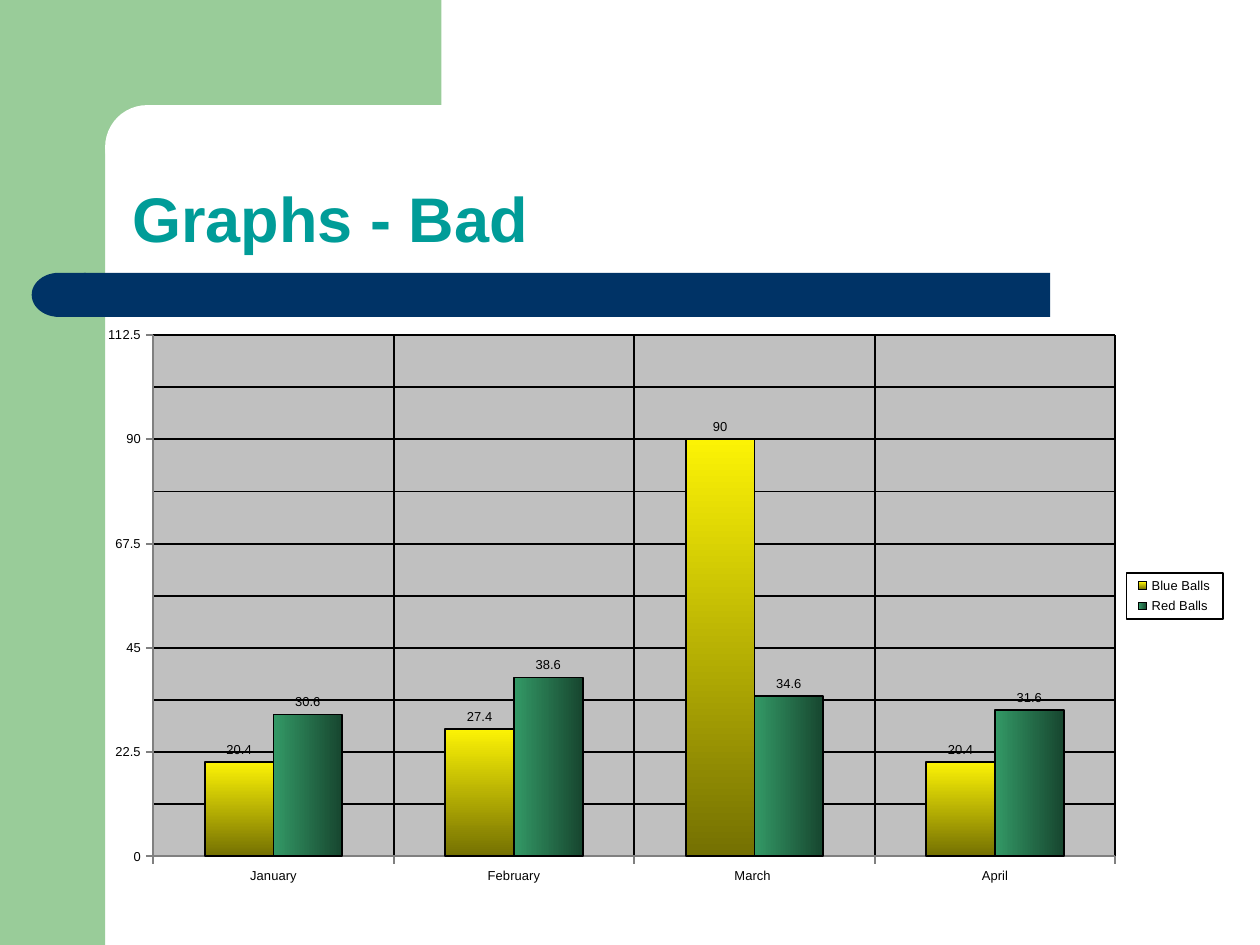
import math
from copy import deepcopy
from lxml import etree
from pptx import Presentation
from pptx import util as u
from pptx.chart.data import CategoryChartData
from pptx.dml.color import RGBColor
from pptx.enum import chart as ch, shapes, text
from pptx.oxml.ns import nsdecls, qn

COLORS = {
    "green": "99CC99", "navy": "003366", "teal": "009C98", "white": "FFFFFF",
    "black": "000000", "axis": "808080", "plot": "C0C0C0",
    "olive": "747002", "yellow": "FCF305", "leaf": "339966", "forest": "17462F",
}


def rgb(name):
    return RGBColor.from_string(COLORS[name])


class SlideBuilder:
    font = "Arial"
    label_size = 7.4

    def __init__(self, slide):
        self.slide = slide

    def paint(self, sp, color):
        sp.shadow.inherit = False
        sp.fill.solid()
        sp.fill.fore_color.rgb = rgb(color)
        sp.line.fill.background()

    def block(self, kind, box, color, radius=None):
        sp = self.slide.shapes.add_shape(kind, *map(u.Cm, box))
        if radius is not None:
            sp.adjustments[0] = radius
        self.paint(sp, color)

    def round_cap(self, left, top, width, height, radius, color):
        """Bar end whose left side is half an ellipse."""
        middle = top + height / 2
        points = [(left + width, top)]
        for step in range(25):
            a = math.pi * step / 24
            points.append((left + radius - radius * math.sin(a),
                           middle - height / 2 * math.cos(a)))
        points.append((left + width, top + height))
        points = [(u.Cm(x), u.Cm(y)) for x, y in points]
        builder = self.slide.shapes.build_freeform(*points[0])
        builder.add_line_segments(points[1:], close=True)
        self.paint(builder.convert_to_shape(), color)

    def style_font(self, font, size, color, bold=False):
        font.name = self.font
        font.size = u.Pt(size)
        font.bold = bold
        font.color.rgb = rgb(color)

    def title(self, words, box):
        sp = self.slide.shapes.title
        sp.left, sp.top, sp.width, sp.height = map(u.Cm, box)
        tf = sp.text_frame
        tf.text = words
        tf.word_wrap = True
        tf.auto_size = text.MSO_AUTO_SIZE.NONE
        tf.vertical_anchor = text.MSO_ANCHOR.BOTTOM
        tf.margin_left = tf.margin_right = u.Cm(0.13)
        tf.margin_top = tf.margin_bottom = u.Cm(0.13)
        p = tf.paragraphs[0]
        p.alignment = text.PP_ALIGN.LEFT
        p.line_spacing = 0.9
        self.style_font(p.runs[0].font, 36, "teal", bold=True)

    def line(self, line, color):
        line.color.rgb = rgb(color)
        line.width = u.Pt(1)

    def layout(self, parent, index, box, inner=False):
        old = parent.find(qn("c:layout"))
        if old is not None:
            parent.remove(old)
        target = '<c:layoutTarget val="inner"/>' if inner else ""
        modes = '<c:xMode val="edge"/><c:yMode val="edge"/>'
        sizes = "".join(f'<c:{k} val="{v}"/>' for k, v in zip("xywh", box))
        parent.insert(index, etree.fromstring(
            f'<c:layout {nsdecls("c")}><c:manualLayout>{target}{modes}{sizes}'
            '</c:manualLayout></c:layout>'))

    def area_format(self, fill, line=None):
        edge = (f'<a:solidFill><a:srgbClr val="{COLORS[line]}"/></a:solidFill>'
                if line else "<a:noFill/>")
        return etree.fromstring(
            f'<c:spPr {nsdecls("c", "a")}><a:solidFill><a:srgbClr val="{COLORS[fill]}"/>'
            f'</a:solidFill><a:ln w="12700">{edge}</a:ln></c:spPr>')

    def axis(self, axis):
        axis.has_major_gridlines = True
        self.line(axis.major_gridlines.format.line, "black")
        self.line(axis.format.line, "axis")
        axis.major_tick_mark = ch.XL_TICK_MARK.OUTSIDE
        axis.minor_tick_mark = ch.XL_TICK_MARK.NONE
        self.style_font(axis.tick_labels.font, self.label_size, "black")

    def series(self, ser, start, end, angle):
        fill = ser.format.fill
        fill.gradient()
        fill.gradient_angle = angle
        for stop, color, position in zip(fill.gradient_stops, (start, end), (0, 1)):
            stop.color.rgb = rgb(color)
            stop.position = position
        self.line(ser.format.line, "black")
        ser.invert_if_negative = False
        labels = ser.data_labels
        labels.show_value = True
        labels.position = ch.XL_LABEL_POSITION.OUTSIDE_END
        self.style_font(labels.font, self.label_size, "black")

    def column_chart(self, box, months, values, gradients):
        data = CategoryChartData()
        data.categories = months
        for name, numbers in values.items():
            data.add_series(name, numbers)
        chart = self.slide.shapes.add_chart(
            ch.XL_CHART_TYPE.COLUMN_CLUSTERED, *map(u.Cm, box), data).chart
        chart.has_title = False
        self.style_font(chart.font, 10, "navy")

        # Axes, with unlabelled lines halfway between the values
        self.axis(chart.category_axis)
        axis = chart.value_axis
        self.axis(axis)
        axis.minimum_scale, axis.maximum_scale = 0, 112.5
        axis.major_unit, axis.minor_unit = 22.5, 11.25
        axis.has_minor_gridlines = True
        plot_area = chart.plots[0]._element.getparent()
        val_ax = plot_area.find(qn("c:valAx"))
        major_format = val_ax.find(qn("c:majorGridlines")).find(qn("c:spPr"))
        val_ax.find(qn("c:minorGridlines")).append(deepcopy(major_format))

        # Columns
        plot = chart.plots[0]
        plot.gap_width = 150
        plot.overlap = 0
        plot.vary_by_categories = False
        for ser, gradient in zip(plot.series, gradients):
            self.series(ser, *gradient)
        self.layout(plot_area, 0, (0.043, 0.031, 0.86, 0.913), inner=True)
        plot_area.append(self.area_format("plot"))

        # Legend
        chart.has_legend = True
        legend = chart.legend
        legend.position = ch.XL_LEGEND_POSITION.RIGHT
        legend.include_in_layout = True
        self.style_font(legend.font, self.label_size, "black")
        element = legend._element
        self.layout(element, 1, (0.913, 0.447, 0.086, 0.081))
        element.find(qn("c:overlay")).addnext(self.area_format("white", "black"))


def main():
    prs = Presentation()
    prs.slide_width, prs.slide_height = u.Cm(25.4), u.Cm(19.05)
    s = SlideBuilder(prs.slides.add_slide(prs.slide_layouts[5]))
    rect = shapes.MSO_SHAPE.RECTANGLE
    rounded = shapes.MSO_SHAPE.ROUNDED_RECTANGLE

    # Green corner with its rounded inner edge
    s.block(rect, (0, 0, 2.12, 19.05), "green")
    s.block(rect, (1.9, 0, 7, 2.96), "green")
    s.block(rounded, (2.12, 2.12, 14.18, 1.69), "white", 0.5)

    # Navy bar under the title
    s.block(rect, (1.69, 5.5, 19.48, 0.89), "navy")
    s.round_cap(0.64, 5.5, 1.09, 0.89, 0.55, "navy")
    s.title("Graphs - Bad", (2.54, 2.12, 22.23, 3.18))

    # Chart
    s.column_chart(
        (2.12, 6.4, 22.55, 11.51),
        ["January", "February", "March ", "April"],
        {"Blue Balls": (20.4, 27.4, 90, 20.4),
         "Red Balls": (30.6, 38.6, 34.6, 31.6)},
        [("olive", "yellow", 90), ("leaf", "forest", 0)])
    prs.save("out.pptx")


if __name__ == "__main__":
    main()
